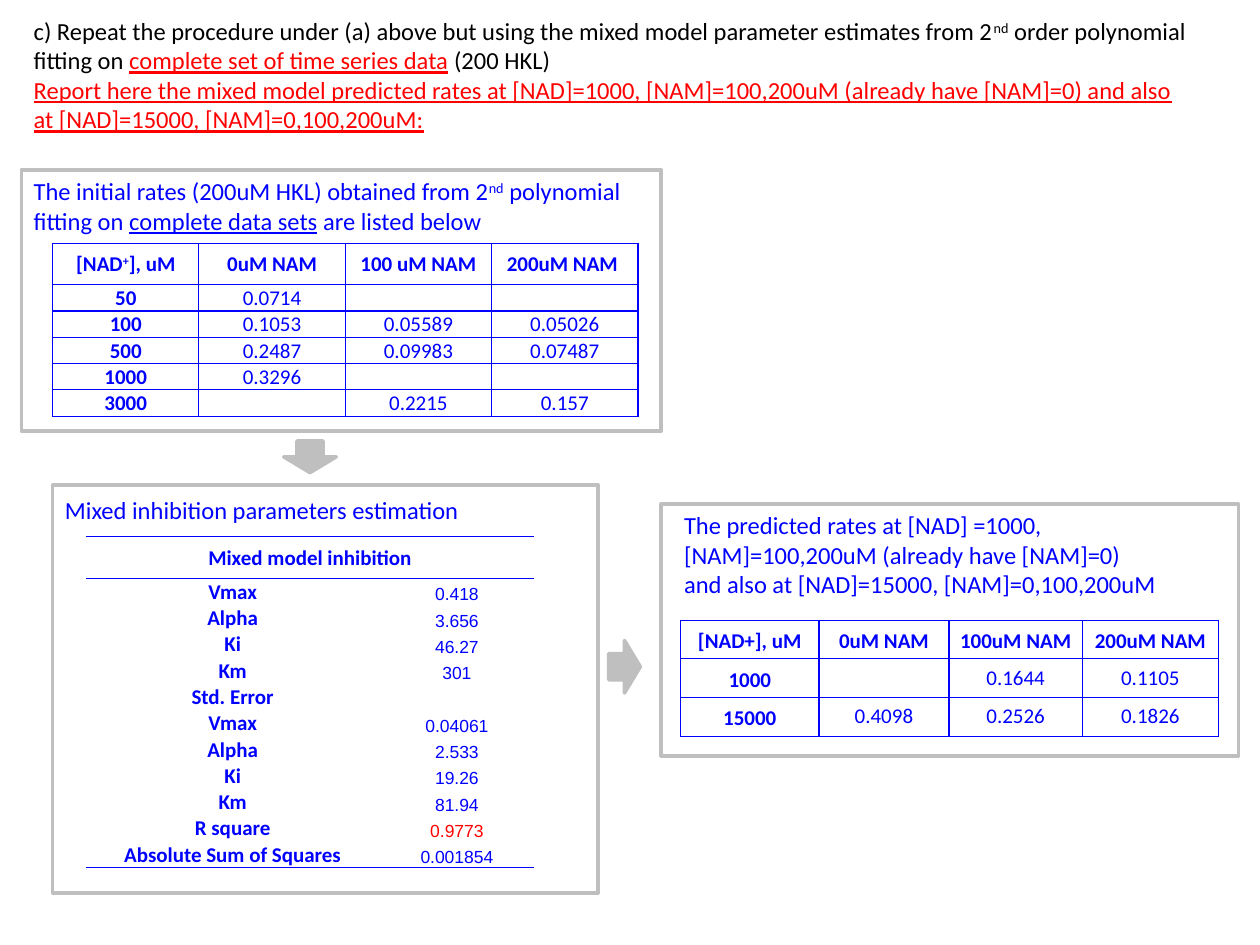
from dataclasses import dataclass

from lxml import etree
from pptx import Presentation
from pptx.dml.color import RGBColor
from pptx.enum.shapes import MSO_SHAPE
from pptx.enum.text import MSO_ANCHOR, PP_ALIGN
from pptx.oxml.ns import qn
from pptx.util import Cm, Pt

RECT, ARROW = MSO_SHAPE.RECTANGLE, MSO_SHAPE.DOWN_ARROW
MID, LOW = MSO_ANCHOR.MIDDLE, MSO_ANCHOR.BOTTOM
LEFT, CENTER = PP_ALIGN.LEFT, PP_ALIGN.CENTER
BLUE, RED, BLACK, GRAY = "0000FF", "FF0000", "000000", "BFBFBF"


@dataclass
class Span:
    text: str
    color: str = ""
    under: bool = False
    sup: bool = False


@dataclass
class Look:
    font: str = "Calibri"
    size: int = 12
    bold: bool = False
    anchor: MSO_ANCHOR = MID
    side: float = 0.02
    top: float = 0.02
    space: float = 1.0


@dataclass
class Grid:
    left: float
    top: float
    cols: list
    rows: list
    cells: list
    label: Look
    value: Look
    boxed: bool = True


@dataclass
class Note:
    box: tuple
    paras: list
    color: str = BLUE
    wrap: bool = True


@dataclass
class Form:
    kind: MSO_SHAPE
    box: tuple
    filled: bool = False
    turn: int = 0


def rgb(code: str) -> RGBColor:
    return RGBColor.from_string(code)


def write(frame, paras: list, *, font="Calibri", size=14, color=BLUE,
          bold=False, align=LEFT, space=None) -> None:
    """Each paragraph is a string or a list of strings and spans."""
    for i, spans in enumerate(paras):
        para = frame.add_paragraph() if i else frame.paragraphs[0]
        para.alignment = align
        if space:
            para.line_spacing = space
        for span in [spans] if isinstance(spans, str) else spans:
            span = Span(span) if isinstance(span, str) else span
            if not span.text:  # keeps an empty cell as low as its row
                etree.SubElement(para._p, qn("a:endParaRPr"), sz=str(size * 100))
                continue
            run = para.add_run()
            run.text = span.text
            face = run.font
            face.name, face.size, face.bold = font, Pt(size), bold
            face.color.rgb = rgb(span.color or color)
            if span.under:
                face.underline = True
            if span.sup:
                run._r.get_or_add_rPr().set("baseline", "30000")


def edge(cell, sides: str) -> None:
    """Rule the named sides of a cell and clear the others."""
    props = cell._tc.get_or_add_tcPr()
    for side in "LRTB":
        line = etree.SubElement(props, qn("a:ln" + side), w=str(Pt(0.75)))
        if side in sides:
            fill = etree.SubElement(line, qn("a:solidFill"))
            etree.SubElement(fill, qn("a:srgbClr"), val=BLUE)
        else:
            etree.SubElement(line, qn("a:noFill"))


def draw_grid(shapes, grid: Grid) -> None:
    rows, cols = len(grid.rows), len(grid.cols)
    table = shapes.add_table(rows, cols, Cm(grid.left), Cm(grid.top),
                             Cm(sum(grid.cols)), Cm(sum(grid.rows))).table
    table.first_row = table.horz_banding = False
    for col, wide in zip(table.columns, grid.cols):
        col.width = Cm(wide)
    for row, high in zip(table.rows, grid.rows):
        row.height = Cm(high)
    for r, line in enumerate(grid.cells):
        for c, item in enumerate(line):
            cell = table.cell(r, c)
            look = grid.label if r == 0 or c == 0 else grid.value
            cell.margin_left = cell.margin_right = Cm(look.side)
            cell.margin_top, cell.margin_bottom = Cm(look.top), 0
            cell.vertical_anchor = look.anchor
            rules = {0: "TB", 1: "T", rows - 1: "B"}.get(r, "")
            edge(cell, "LRTB" if grid.boxed else rules)
            cell.fill.background()
            write(cell.text_frame, [item], font=look.font, size=look.size,
                  bold=look.bold, align=CENTER, space=look.space)
    if not grid.boxed:
        table.cell(0, 0).merge(table.cell(0, cols - 1))


def draw_note(shapes, note: Note) -> None:
    frame = shapes.add_textbox(*map(Cm, note.box)).text_frame
    frame.word_wrap = note.wrap
    write(frame, note.paras, color=note.color)


def draw_form(shapes, form: Form) -> None:
    shape = shapes.add_shape(form.kind, *map(Cm, form.box))
    shape.shadow.inherit = False
    shape.rotation = form.turn
    shape.line.color.rgb, shape.line.width = rgb(GRAY), Pt(2)
    if form.filled:
        shape.fill.solid()
        shape.fill.fore_color.rgb = rgb(GRAY)
    else:
        shape.fill.background()


# Frames and arrows
FORMS = [
    Form(RECT, (0.43, 3.43, 12.9, 5.26)),
    Form(RECT, (1.06, 9.78, 11, 8.22)),
    Form(RECT, (13.33, 10.16, 11.64, 5.08)),
    Form(ARROW, (5.72, 8.89, 1.06, 0.64), True),
    Form(ARROW, (12.06, 13.12, 1.06, 0.64), True, 270),
]

# Text blocks
NOTES = [
    Note((0.43, 0.2, 23.93, 2.64), [
        ["c) Repeat the procedure under (a) above but using the mixed model "
         "parameter estimates from 2", Span("nd", sup=True),
         " order polynomial fitting on ",
         Span("complete set of time series data", RED, True), " (200 HKL)"],
        [Span("Report here the mixed model predicted rates at [NAD]=1000, "
              "[NAM]=100,200uM (already have [NAM]=0) and also at "
              "[NAD]=15000, [NAM]=0,100,200uM:", RED, True)]], BLACK),
    Note((0.43, 3.43, 12.7, 1.45), [
        ["The initial rates (200uM HKL) obtained from 2", Span("nd", sup=True),
         " polynomial fitting on ", Span("complete data sets", under=True),
         " are listed below"]]),
    Note((1.06, 9.86, 8.53, 0.86),
         ["Mixed inhibition parameters estimation"], wrap=False),
    Note((13.54, 10.16, 10.16, 2.06), [
        "The predicted rates at [NAD] =1000, [NAM]=100,200uM (already have "
        "[NAM]=0) and also at [NAD]=15000, [NAM]=0,100,200uM"]),
]

# Tables
BOLD, PLAIN = Look(bold=True), Look()
GRIDS = [
    Grid(1.06, 4.9, [2.95] * 4, [0.84] + [0.53] * 5, [
        [["[NAD", Span("+", sup=True), "], uM"],
         "0uM NAM", "100 uM NAM", "200uM NAM "],
        ["50", "0.0714", "", ""],
        ["100", "0.1053", "0.05589", "0.05026"],
        ["500", "0.2487", "0.09983", "0.07487"],
        ["1000", "0.3296", "", ""],
        ["3000", "", "0.2215", "0.157"]], BOLD, PLAIN),
    Grid(13.72, 12.5, [2.79, 2.62, 2.69, 2.74], [0.78] * 3, [
        ["[NAD+], uM", "0uM NAM", "100uM NAM", "200uM NAM"],
        ["1000", "", "0.1644", "0.1105"],
        ["15000", "0.4098", "0.2526", "0.1826"]],
        Look(bold=True, side=0.18, top=0, space=1.15), Look(side=0, top=0)),
    Grid(1.73, 10.82, [5.92, 3.12], [0.84] + [0.53] * 11, [
        ["Mixed model inhibition", ""],
        ["Vmax", "0.418"], ["Alpha", "3.656"], ["Ki", "46.27"], ["Km", "301"],
        ["Std. Error", ""],
        ["Vmax", "0.04061"], ["Alpha", "2.533"], ["Ki", "19.26"],
        ["Km", "81.94"], ["R square", [Span("0.9773", RED)]],
        ["Absolute Sum of Squares", "0.001854"]],
        BOLD, Look("Arial", 10, anchor=LOW), False),
]


def main() -> None:
    deck = Presentation()
    deck.slide_width, deck.slide_height = Cm(25.4), Cm(19.05)
    shapes = deck.slides.add_slide(deck.slide_layouts[6]).shapes
    for draw, parts in ((draw_form, FORMS), (draw_note, NOTES),
                        (draw_grid, GRIDS)):
        for part in parts:
            draw(shapes, part)
    deck.save("out.pptx")


if __name__ == "__main__":
    main()
